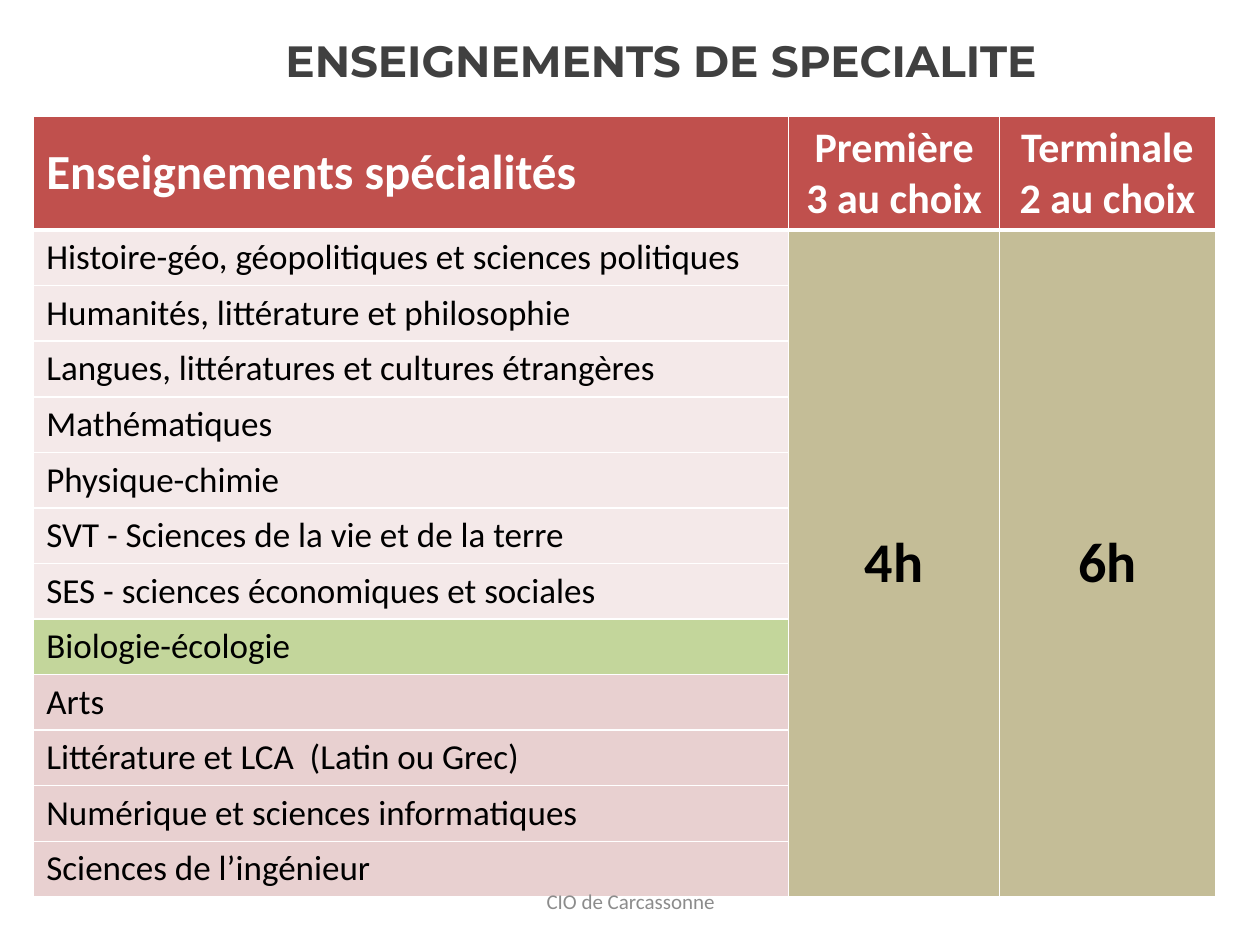
from lxml import etree
from pptx import Presentation
from pptx.dml.color import RGBColor
from pptx.enum.text import MSO_ANCHOR, PP_ALIGN
from pptx.oxml.ns import qn
from pptx.util import Cm, Pt

LEFT, CENTER = PP_ALIGN.LEFT, PP_ALIGN.CENTER
TOP, MIDDLE = MSO_ANCHOR.TOP, MSO_ANCHOR.MIDDLE

WHITE = RGBColor(0xFF, 0xFF, 0xFF)
BLACK = RGBColor(0x00, 0x00, 0x00)
DARK_GREY = RGBColor(0x40, 0x40, 0x40)
GREY = RGBColor(0x8C, 0x8C, 0x8C)
RED = RGBColor(0xC0, 0x50, 0x4D)
PALE_PINK = RGBColor(0xF4, 0xE9, 0xE9)
PINK = RGBColor(0xE8, 0xD0, 0xD0)
GREEN = RGBColor(0xC3, 0xD6, 0x9B)
TAN = RGBColor(0xC4, 0xBD, 0x97)


def write(frame, lines, size, color, bold=False, align=LEFT, font="Calibri"):
    for index, line in enumerate(lines):
        para = frame.paragraphs[0] if index == 0 else frame.add_paragraph()
        para.alignment = align
        span = para.add_run()
        span.text = line
        span.font.name = font
        span.font.size = Pt(size)
        span.font.bold = bold
        span.font.color.rgb = color


def style_cell(cell, fill, top_width, bottom_width):
    properties = cell._tc.get_or_add_tcPr()
    widths = {"a:lnL": 1, "a:lnR": 1, "a:lnT": top_width, "a:lnB": bottom_width}
    for tag, width in widths.items():
        line = etree.SubElement(properties, qn(tag), w=str(Pt(width)))
        solid = etree.SubElement(line, qn("a:solidFill"))
        etree.SubElement(solid, qn("a:srgbClr"), val=str(WHITE))
    cell.fill.solid()
    cell.fill.fore_color.rgb = fill


deck = Presentation()
deck.slide_width, deck.slide_height = Cm(25.4), Cm(19.05)
page = deck.slides.add_slide(deck.slide_layouts[6])

title = page.shapes.add_textbox(Cm(2.24), Cm(0.56), Cm(22.17), Cm(1.22))
title.text_frame.word_wrap = True
write(title.text_frame, ["ENSEIGNEMENTS DE SPECIALITE"], 25, DARK_GREY, True, CENTER, "Montserrat")

subjects = [
    ("Histoire-géo, géopolitiques et sciences politiques", PALE_PINK),
    ("Humanités, littérature et philosophie", PALE_PINK),
    ("Langues, littératures et cultures étrangères", PALE_PINK),
    ("Mathématiques", PALE_PINK),
    ("Physique-chimie", PALE_PINK),
    ("SVT - Sciences de la vie et de la terre", PALE_PINK),
    ("SES - sciences économiques et sociales", PALE_PINK),
    ("Biologie-écologie", GREEN),
    ("Arts", PINK),
    ("Littérature et LCA  (Latin ou Grec)", PINK),
    ("Numérique et sciences informatiques", PINK),
    ("Sciences de l’ingénieur", PINK),
]
headers = [
    (["Enseignements spécialités"], 28, LEFT, MIDDLE),
    (["Première", "3 au choix"], 24, CENTER, TOP),
    (["Terminale", "2 au choix"], 24, CENTER, TOP),
]
column_widths = [15.22, 4.25, 4.35]
header_height, row_height = 2.3, 1.12
last_row = len(subjects)

table = page.shapes.add_table(
    last_row + 1, len(headers), Cm(0.68), Cm(2.34),
    Cm(sum(column_widths)), Cm(header_height + last_row * row_height),
).table
for column, width in zip(table.columns, column_widths):
    column.width = Cm(width)
for index, row in enumerate(table.rows):
    row.height = Cm(row_height if index else header_height)

for column, (lines, size, align, anchor) in enumerate(headers):
    cell = table.cell(0, column)
    style_cell(cell, RED, 1, 3)
    cell.vertical_anchor = anchor
    write(cell.text_frame, lines, size, WHITE, True, align)

for row, (subject, fill) in enumerate(subjects, 1):
    top_width = 3 if row == 1 else 1
    cell = table.cell(row, 0)
    style_cell(cell, fill, top_width, 1)
    write(cell.text_frame, [subject], 20, BLACK)
    for column in (1, 2):
        style_cell(table.cell(row, column), TAN, top_width, 1)

for column, hours in enumerate(["4h", "6h"], 1):
    cell = table.cell(1, column)
    cell.merge(table.cell(last_row, column))
    cell.vertical_anchor = MIDDLE
    write(cell.text_frame, [hours], 32, BLACK, True, CENTER)

footer = page.shapes.add_textbox(Cm(8.69), Cm(17.65), Cm(8.05), Cm(1.02))
footer.text_frame.word_wrap = True
footer.text_frame.vertical_anchor = MIDDLE
write(footer.text_frame, ["CIO de Carcassonne"], 12, GREY, align=CENTER)

deck.save("out.pptx")
